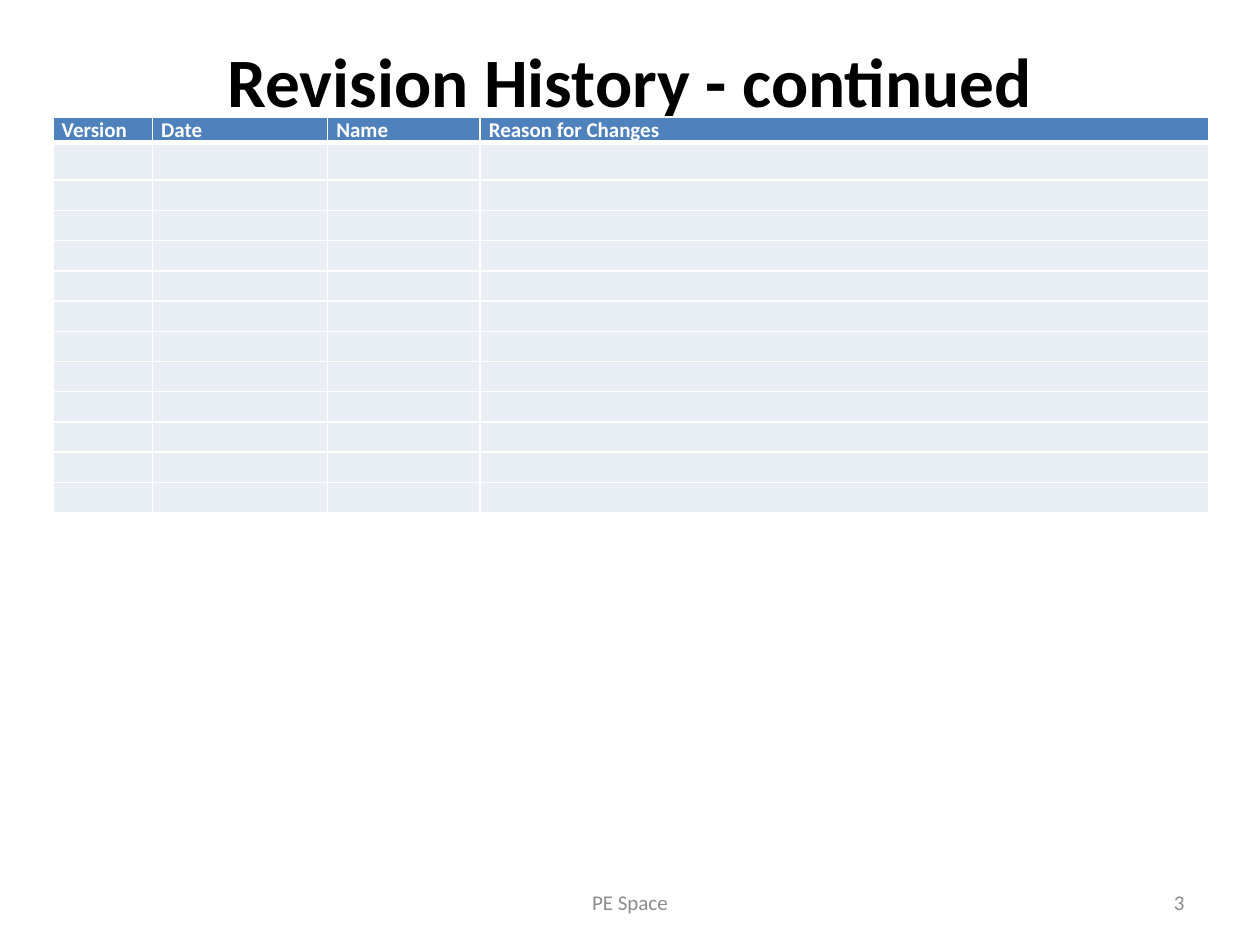
from lxml import etree
from pptx import Presentation
from pptx import util as u
from pptx.dml.color import RGBColor
from pptx.enum import text
from pptx.oxml import ns

WIDTH, HEIGHT = 10, 7.5
FONT = "Calibri"
COLORS = {"title": "000000", "header": "4F81BD", "body": "E9EDF4",
          "white": "FFFFFF", "footer": "8C8C8C"}

HEADINGS = ["Version", "Date", "Name", "Reason for Changes"]
COLUMN_WIDTHS = [0.79, 1.39, 1.21, 5.78]
ROW_HEIGHTS = [0.2, 0.3] + [0.24] * 11

TITLE_FORMAT = {"name": FONT, "size": u.Pt(39.6), "bold": True}
HEADER_FORMAT = {"name": FONT, "size": u.Pt(12), "bold": True}
FOOTER_FORMAT = {"name": FONT, "size": u.Pt(12), "bold": False}


def set_attributes(target, values):
    for name, value in values.items():
        setattr(target, name, value)


def write(paragraph, words, font_format, color):
    run = paragraph.add_run()
    run.text = words
    set_attributes(run.font, font_format)
    run.font.color.rgb = RGBColor.from_string(COLORS[color])


def add_text(slide, words, place, font_format, color, align, frame_format):
    """Place is left, top, width and height as shares of the slide."""
    left, top, width, height = place
    box = slide.shapes.add_textbox(
        u.Inches(left * WIDTH), u.Inches(top * HEIGHT),
        u.Inches(width * WIDTH), u.Inches(height * HEIGHT))
    set_attributes(box.text_frame, {"word_wrap": True, **frame_format})
    paragraph = box.text_frame.paragraphs[0]
    paragraph.alignment = align
    write(paragraph, words, font_format, color)


def set_borders(cell, widths):
    properties = cell._tc.get_or_add_tcPr()
    for side, points in widths.items():
        line = etree.SubElement(properties, ns.qn(f"a:ln{side}"), w=str(u.Pt(points)))
        fill = etree.SubElement(line, ns.qn("a:solidFill"))
        etree.SubElement(fill, ns.qn("a:srgbClr"), val=COLORS["white"])


def format_cell(cell, row):
    # The rule under the header is heavier than the others
    set_borders(cell, {"L": 1, "R": 1, "T": 3 if row == 1 else 1,
                       "B": 3 if row == 0 else 1})
    cell.fill.solid()
    cell.fill.fore_color.rgb = RGBColor.from_string(
        COLORS["header" if row == 0 else "body"])
    set_attributes(cell, {"margin_left": u.Inches(0.07), "margin_right": u.Inches(0.07),
                          "margin_top": 0, "margin_bottom": 0})


def add_revision_table(slide, left, top):
    table = slide.shapes.add_table(
        len(ROW_HEIGHTS), len(COLUMN_WIDTHS), u.Inches(left), u.Inches(top),
        u.Inches(sum(COLUMN_WIDTHS)), u.Inches(sum(ROW_HEIGHTS))).table
    for column, width in zip(table.columns, COLUMN_WIDTHS):
        column.width = u.Inches(width)
    for row, height in enumerate(ROW_HEIGHTS):
        table.rows[row].height = u.Inches(height)
        for column, heading in enumerate(HEADINGS):
            cell = table.cell(row, column)
            format_cell(cell, row)
            paragraph = cell.text_frame.paragraphs[0]
            if row == 0:
                write(paragraph, heading, HEADER_FORMAT, "white")
            else:
                # Small type keeps the empty rows low
                etree.SubElement(paragraph._p, ns.qn("a:endParaRPr"), sz="1200")


def main():
    presentation = Presentation()
    set_attributes(presentation, {"slide_width": u.Inches(WIDTH),
                                  "slide_height": u.Inches(HEIGHT)})
    slide = presentation.slides.add_slide(presentation.slide_layouts[6])

    # Title
    add_text(slide, "Revision History - continued", (0.05, 0.04, 0.9, 1 / 6),
             TITLE_FORMAT, "title", text.PP_ALIGN.CENTER,
             {"vertical_anchor": text.MSO_ANCHOR.TOP, "margin_top": 0})

    # Revision table
    add_revision_table(slide, 0.42, 0.93)

    # Footer and slide number
    middle = {"vertical_anchor": text.MSO_ANCHOR.MIDDLE}
    for words, left, width, align in (
            ("PE Space", 0.34, 0.32, text.PP_ALIGN.CENTER),
            ("3", 0.72, 0.23, text.PP_ALIGN.RIGHT)):
        add_text(slide, words, (left, 0.93, width, 0.05),
                 FOOTER_FORMAT, "footer", align, middle)

    presentation.save("out.pptx")


if __name__ == "__main__":
    main()
